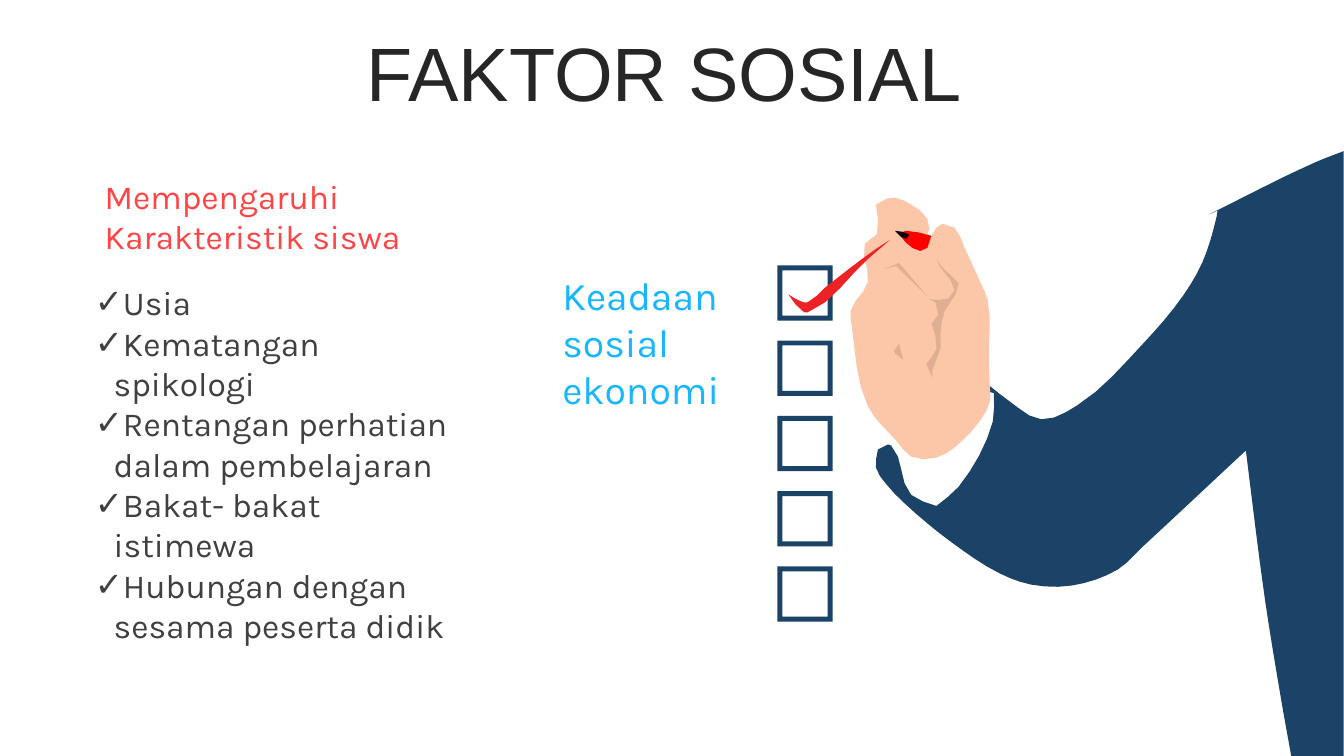
from math import hypot

from lxml.etree import SubElement
from pptx import Presentation
from pptx.dml.color import RGBColor
from pptx.enum.shapes import MSO_SHAPE as Preset
from pptx.enum.text import MSO_ANCHOR as Anchor, MSO_AUTO_SIZE as AutoSize, PP_ALIGN as Align
from pptx.oxml.ns import qn
from pptx.util import Pt

COLORS = {
    "title": "262626", "list": "404040", "heading": "FE4444", "economy": "17B6FF",
    "navy": "1B4367", "skin": "FCC7A8", "crease": "DFAF93", "tick": "ED2225",
    "marker": "FF0000", "tip": "030201",
}
GRID = 0.72  # points per unit of the drawing grid


def write(box, lines, place, size, color, font="Karla", anchor=Anchor.MIDDLE,
          align=Align.LEFT, spacing=1.0, bullet=None, inset=7.2):
    box.left, box.top, box.width, box.height = [Pt(length) for length in place]
    frame = box.text_frame
    frame.word_wrap = True
    frame.auto_size = AutoSize.NONE
    frame.vertical_anchor = anchor
    frame.margin_left = Pt(inset)
    for index, line in enumerate(lines):
        para = frame.paragraphs[0] if index == 0 else frame.add_paragraph()
        para.alignment = align
        para.line_spacing = spacing
        para.space_before = Pt(0)
        span = para.add_run()
        span.text = line
        span.font.name = font
        span.font.size = Pt(size)
        span.font.color.rgb = RGBColor.from_string(COLORS[color])
        if bullet:
            settings = para._p.get_or_add_pPr()
            settings.set("marL", str(Pt(13.5)))
            settings.set("indent", str(Pt(-13.5)))
            SubElement(settings, qn("a:buFont"), typeface="Arial")
            SubElement(settings, qn("a:buChar"), char=bullet)


def draw_outline(color, points):
    """Fill a closed outline, rounding long gentle turns and keeping sharp corners."""
    count = len(points)
    sides = []
    for index, (x, y) in enumerate(points):
        next_x, next_y = points[(index + 1) % count]
        length = hypot(next_x - x, next_y - y)
        sides.append(((next_x - x) / length, (next_y - y) / length, length))
    tangents = []
    for index, (x, y, _) in enumerate(sides):
        before_x, before_y, _ = sides[index - 1]
        size = hypot(x + before_x, y + before_y)
        is_corner = x * before_x + y * before_y < 0.55
        tangents.append(None if is_corner else ((x + before_x) / size, (y + before_y) / size))
    curve = []
    for index, side in enumerate(sides):
        following = (index + 1) % count
        leave = tangents[index] or side[:2]
        arrive = tangents[following] or side[:2]
        reach = side[2] / 3
        is_straight = leave == arrive
        steps = 1 if is_straight else min(4, 1 + int(side[2] / 15))
        for step in range(steps):
            t = step / steps
            curve.append([
                Pt(GRID * ((1 - t) ** 3 * start + 3 * (1 - t) ** 2 * t * (start + reach * out)
                           + 3 * (1 - t) * t ** 2 * (end - reach * into) + t ** 3 * end))
                for start, end, out, into in zip(points[index], points[following], leave, arrive)
            ])
    builder = page.shapes.build_freeform(*curve[0])
    builder.add_line_segments(curve[1:], close=True)
    shape = builder.convert_to_shape()
    shape.shadow.inherit = False
    shape.fill.solid()
    shape.fill.fore_color.rgb = RGBColor.from_string(COLORS[color])
    shape.line.fill.background()


deck = Presentation()
deck.slide_width, deck.slide_height = Pt(960), Pt(540)
page = deck.slides.add_slide(deck.slide_layouts[1])

write(page.shapes.title, ["FAKTOR SOSIAL "], (25.2, 26.6, 911.5, 56.9), 54, "title",
      font="Arial", align=Align.CENTER, spacing=0.9)

for row in range(5):
    checkbox = page.shapes.add_shape(Preset.FRAME, Pt(555.3), Pt(189.5 + 53.75 * row),
                                     Pt(39.5), Pt(39.5))
    checkbox.adjustments[0] = 0.09
    checkbox.shadow.inherit = False
    checkbox.fill.solid()
    checkbox.fill.fore_color.rgb = RGBColor.from_string(COLORS["navy"])
    checkbox.line.fill.background()

sleeve = [
    (1333, 750), (1281, 750), (1271, 694), (1255, 595), (1236, 447), (1133, 543), (1109, 565),
    (1063, 581), (1023, 580), (992, 569), (944, 538), (897, 499), (879, 480), (869, 464),
    (871, 446), (881, 441), (884, 442), (904, 491), (929, 502), (951, 483), (985, 418),
    (986, 390), (982, 389), (982, 383), (1000, 397), (1033, 416), (1069, 402), (1134, 341),
    (1174, 293), (1193, 260), (1207, 215), (1208, 209), (1199, 213), (1305, 161), (1333, 150),
]
hand = [
    (982, 383), (982, 399), (956, 436), (929, 454), (904, 453), (890, 438), (861, 403),
    (845, 323), (844, 308), (861, 280), (858, 242), (870, 232), (869, 203), (880, 197),
    (887, 196), (904, 203), (920, 217), (922, 227), (920, 233), (924, 234), (929, 226),
    (935, 222), (947, 226), (957, 246), (973, 281), (980, 298), (981, 359),
]
tick = [(819, 285), (869, 247), (883, 238), (861, 257), (801, 310), (798, 310), (782, 292),
        (797, 300), (801, 300)]
marker = [(924, 234), (920, 246), (913, 249), (899, 241), (894, 235), (896, 230), (899, 229)]
palm_crease = [
    (925, 375), (919, 361), (929, 346), (928, 333), (924, 321), (931, 312), (928, 300),
    (922, 297), (941, 296), (947, 288), (943, 278), (932, 264), (929, 256), (933, 263),
    (944, 274), (951, 281), (948, 292), (937, 309), (933, 331), (933, 346), (925, 367),
]
finger_crease = [(920, 294), (889, 264), (877, 267), (892, 261), (909, 281)]
thumb_crease = [(892, 341), (896, 357), (888, 351), (887, 348)]
marker_tip = [(888, 229), (896, 230), (902, 233), (899, 237), (894, 235)]

for color, points in [
    ("navy", sleeve), ("skin", hand), ("tick", tick), ("marker", marker),
    ("crease", palm_crease), ("crease", finger_crease), ("crease", thumb_crease),
    ("tip", marker_tip),
]:
    draw_outline(color, points)

write(page.shapes.add_textbox(0, 0, 0, 0), ["Keadaan sosial ekonomi"],
      (394.6, 189.4, 152.6, 108.7), 28, "economy", anchor=Anchor.BOTTOM)
write(page.placeholders[1], [
    "Usia",
    "Kematangan spikologi",
    "Rentangan perhatian dalam pembelajaran",
    "Bakat- bakat istimewa",
    "Hubungan dengan sesama peserta didik",
], (67.7, 198, 267.1, 268), 24, "list", anchor=Anchor.TOP, bullet="✓", inset=0)
write(page.shapes.add_textbox(0, 0, 0, 0), ["Mempengaruhi Karakteristik siswa"],
      (67.7, 121.7, 232.6, 65.5), 24, "heading")

deck.save("out.pptx")
